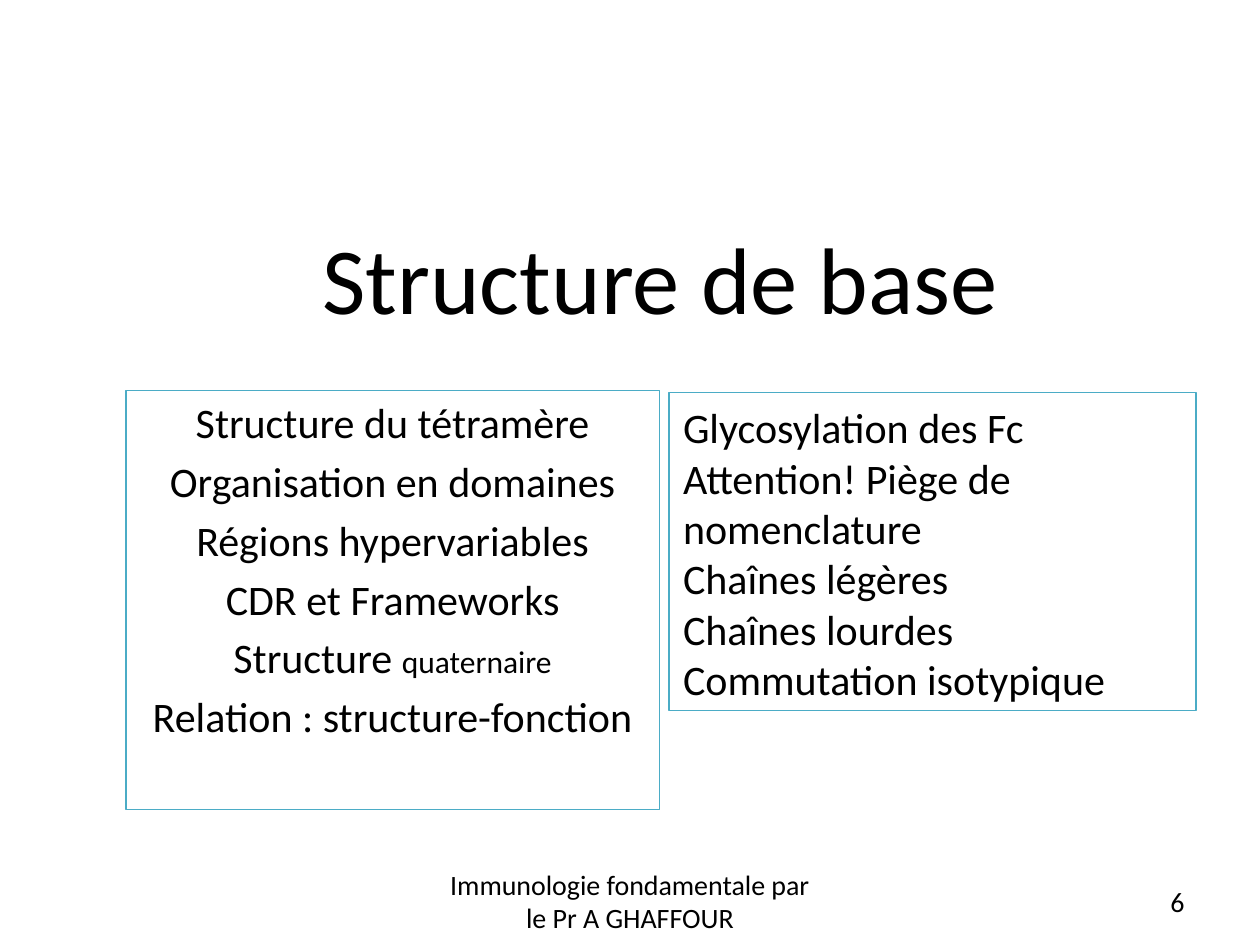
"""Build the section slide "Structure de base" with two framed topic lists."""
from pptx import Presentation
from pptx import util as u
from pptx.dml.color import RGBColor
from pptx.enum import shapes, text

COLORS = {"text": "000000", "frame": "4BACC6"}
FONT = "Calibri"
TITLE = "Structure de base"
LEFT_TOPICS = [
    "Structure du tétramère",
    "Organisation en domaines",
    "Régions hypervariables",
    "CDR et Frameworks",
    "Structure ",
    "Relation : structure-fonction",
]
SMALL_WORD = {"topic": "Structure ", "word": "quaternaire", "size": 18}
RIGHT_TOPICS = [
    "Glycosylation des Fc",
    "Attention! Piège de nomenclature",
    "Chaînes légères",
    "Chaînes lourdes",
    "Commutation isotypique",
]
FOOTER = "Immunologie fondamentale par le Pr A GHAFFOUR"
PAGE_NUMBER = "6"
BOXES = {
    "title": (2.52, 3.53, 21.59, 4.08),
    "left": (2.54, 7.87, 10.75, 8.45),
    "right": (13.49, 7.92, 10.62, 6.4),
    "footer": (8.68, 17.65, 8.04, 1.02),
    "number": (18.2, 17.65, 5.93, 1.02),
}


def place(shape, box):
    shape.left, shape.top, shape.width, shape.height = map(u.Cm, BOXES[box])


def write(shape, content, size, alignment, anchor):
    frame = shape.text_frame
    frame.text = content
    frame.word_wrap = True
    frame.auto_size = text.MSO_AUTO_SIZE.NONE
    frame.vertical_anchor = anchor
    for paragraph in frame.paragraphs:
        paragraph.alignment = alignment
        for run in paragraph.runs:
            style(run, size)


def style(run, size):
    run.font.size = u.Pt(size)
    run.font.name = FONT
    run.font.color.rgb = RGBColor.from_string(COLORS["text"])


def outline(shape):
    shape.line.color.rgb = RGBColor.from_string(COLORS["frame"])
    shape.line.width = u.Pt(0.75)


def main():
    align, anchor = text.PP_ALIGN, text.MSO_ANCHOR
    presentation = Presentation()
    presentation.slide_width, presentation.slide_height = u.Cm(25.4), u.Cm(19.05)
    slide = presentation.slides.add_slide(presentation.slide_layouts[0])

    title, left = slide.placeholders
    place(title, "title")
    write(title, TITLE, 54, align.CENTER, anchor.MIDDLE)

    place(left, "left")
    write(left, "\n".join(LEFT_TOPICS), 24, align.CENTER, anchor.TOP)
    outline(left)
    paragraph = left.text_frame.paragraphs[LEFT_TOPICS.index(SMALL_WORD["topic"])]
    run = paragraph.add_run()
    run.text = SMALL_WORD["word"]
    style(run, SMALL_WORD["size"])

    for box, content, alignment in (
        ("footer", FOOTER, align.CENTER),
        ("number", PAGE_NUMBER, align.RIGHT),
    ):
        shape = slide.shapes.add_textbox(*map(u.Cm, BOXES[box]))
        write(shape, content, 16, alignment, anchor.MIDDLE)

    right = slide.shapes.add_shape(
        shapes.MSO_SHAPE.RECTANGLE, *map(u.Cm, BOXES["right"])
    )
    right.shadow.inherit = False
    right.fill.background()
    outline(right)
    write(right, "\n".join(RIGHT_TOPICS), 24, align.LEFT, anchor.BOTTOM)
    right.text_frame.margin_left = u.Cm(0.28)

    presentation.save("out.pptx")


if __name__ == "__main__":
    main()
